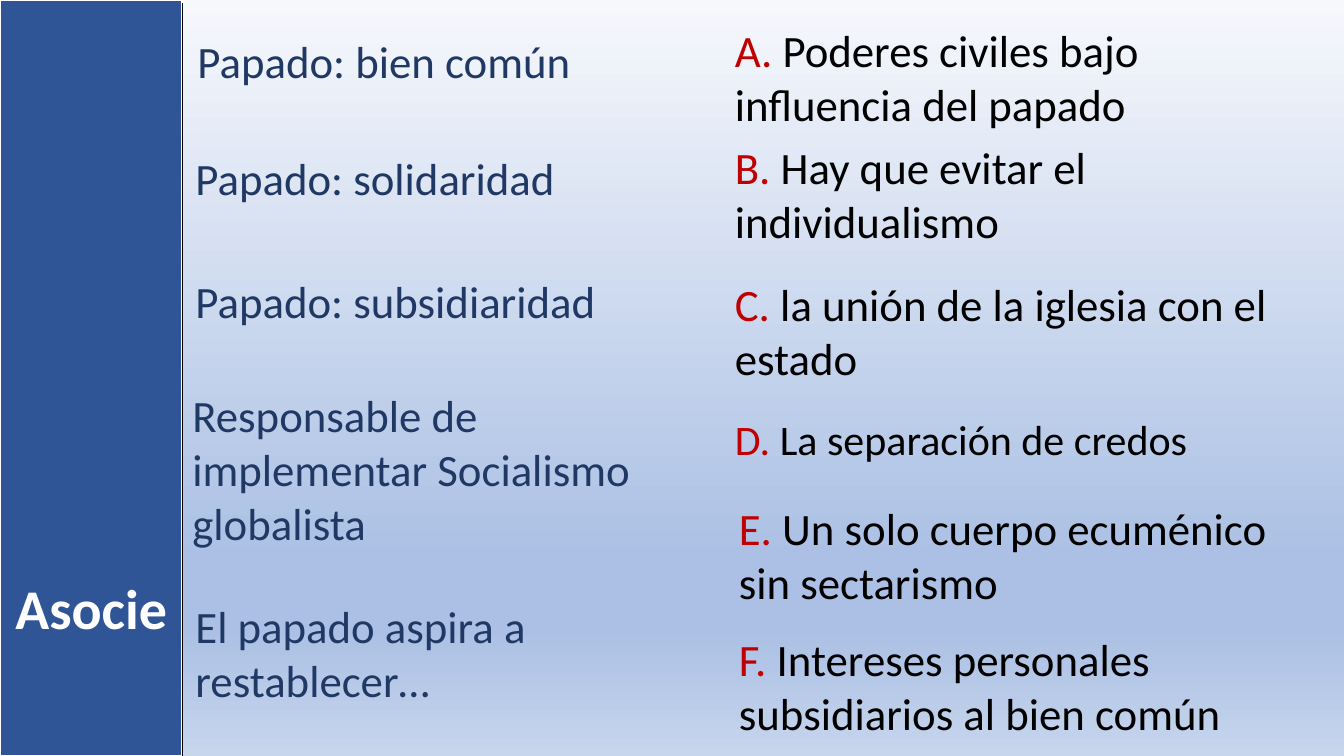
from lxml import etree
from pptx import Presentation
from pptx.dml.color import RGBColor
from pptx.enum.shapes import MSO_CONNECTOR as CONN, MSO_SHAPE as SHAPE
from pptx.enum.text import MSO_AUTO_SIZE as AUTO, PP_ALIGN as ALIGN
from pptx.oxml.ns import qn
from pptx.util import Inches, Pt

FONT = "Calibri"
NAVY, RED, BLACK, WHITE, BLUE = "203864", "C00000", "000000", "FFFFFF", "2F5597"
BAR_W, SLIDE_W, SLIDE_H = 1.81, 13.33, 7.5
BACKGROUND = [(0, "F6F8FC"), (74, "ABC0E4"), (83, "ABC0E4"), (100, "C7D5ED")]

# left, top, width, height, text
TERMS = [
    (1.86, 0.29, 4.89, 0.64, "Papado: bien común"),
    (1.84, 1.45, 5.16, 0.64, "Papado: solidaridad"),
    (1.84, 2.67, 4.46, 0.64, "Papado: subsidiaridad"),
    (1.81, 3.8, 4.94, 1.72, "Responsable de implementar Socialismo globalista"),
    (1.84, 5.89, 4.46, 1.18, "El papado aspira a restablecer…"),
]
# left, top, width, height, size, text
ANSWERS = [
    (7.19, 0.18, 5.96, 1.18, 32, "Poderes civiles bajo influencia del papado"),
    (7.19, 1.34, 5.96, 1.18, 32, "Hay que evitar el individualismo"),
    (7.19, 2.7, 5.6, 1.18, 32, "la unión de la iglesia con el estado"),
    (7.19, 4.05, 5.23, 0.61, 30, "La separación de credos"),
    (7.23, 4.92, 5.53, 1.18, 32, "Un solo cuerpo ecuménico sin sectarismo"),
    (7.23, 6.22, 5.67, 1.18, 32, "Intereses personales subsidiarios al bien común"),
]


def rgb(color):
    return RGBColor.from_string(color)


def set_background(slide, stops):
    """Fill the background top to bottom with (percent, colour) stops."""
    fill = slide.background.fill
    fill.gradient()
    fill.gradient_angle = 270
    stop_list = slide.element.find(".//" + qn("a:gsLst"))
    for stop in list(stop_list):
        stop_list.remove(stop)
    for percent, color in stops:
        stop = etree.SubElement(stop_list, qn("a:gs"), pos=str(percent * 1000))
        etree.SubElement(stop, qn("a:srgbClr"), val=color)


def add_bar(slide):
    sp = slide.shapes.add_shape(SHAPE.RECTANGLE, 0, 0, Inches(BAR_W), Inches(SLIDE_H))
    sp.shadow.inherit = False
    sp.fill.solid()
    sp.fill.fore_color.rgb = rgb(BLUE)
    sp.line.color.rgb = rgb(WHITE)
    sp.line.width = Pt(1.5)


def add_text(slide, box, runs, size=32, bold=False, align=ALIGN.LEFT):
    """Add a one-paragraph text box from (text, colour) runs."""
    tf = slide.shapes.add_textbox(*map(Inches, box)).text_frame
    tf.word_wrap = True
    tf.auto_size = AUTO.SHAPE_TO_FIT_TEXT
    p = tf.paragraphs[0]
    p.alignment = align
    for text, color in runs:
        r = p.add_run()
        r.text = text
        r.font.name = FONT
        r.font.size = Pt(size)
        r.font.bold = bold
        r.font.color.rgb = rgb(color)


def add_divider(slide):
    x = Inches(BAR_W)
    line = slide.shapes.add_connector(CONN.STRAIGHT, x, Inches(0.03), x, Inches(SLIDE_H))
    line.line.color.rgb = rgb(BLACK)
    line.line.width = Pt(1)
    etree.SubElement(line.element.spPr, qn("a:effectLst"))


def main():
    prs = Presentation()
    prs.slide_width, prs.slide_height = Inches(SLIDE_W), Inches(SLIDE_H)
    slide = prs.slides.add_slide(prs.slide_layouts[6])
    set_background(slide, BACKGROUND)
    add_bar(slide)
    for *box, text in TERMS:
        add_text(slide, box, [(text, NAVY)])
    for letter, (*box, size, text) in zip("ABCDEF", ANSWERS):
        add_text(slide, box, [(f"{letter}. ", RED), (text, BLACK)], size)
    add_text(slide, (0, 5.64, BAR_W, 0.77), [("Asocie", WHITE)], 40, True, ALIGN.CENTER)
    add_divider(slide)
    prs.save("out.pptx")


if __name__ == "__main__":
    main()
